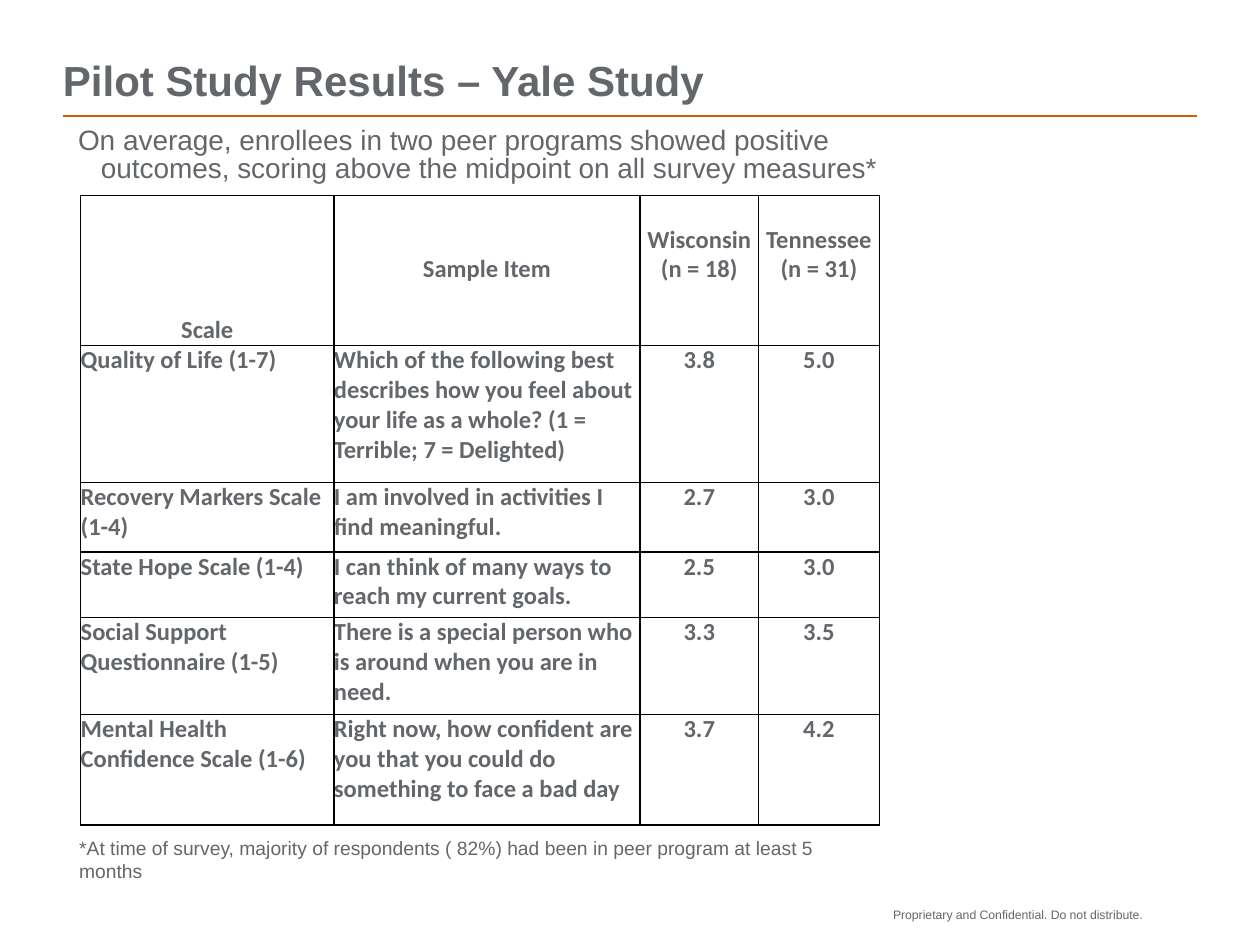
from lxml import etree
from pptx import Presentation, util as u
from pptx.dml.color import RGBColor
from pptx.enum import shapes, text
from pptx.oxml import ns

HUES = {"ink": "63666A", "rule": "D45D00", "grid": "000000"}
WIDE, HIGH = u.Inches(10), u.Inches(7.5)

HEAD = [["Scale", "", "Wisconsin", "Tennessee"],
        ["", "Sample Item", "(n = 18)", "(n = 31)"]]
BODY = [
    ["Quality of Life (1-7)",
     "Which of the following best describes how you feel about your life "
     "as a whole? (1 = Terrible; 7 = Delighted)", "3.8", "5.0"],
    ["Recovery Markers Scale (1-4)",
     "I am involved in activities I find meaningful.", "2.7", "3.0"],
    ["State Hope Scale (1-4)",
     "I can think of many ways to reach my current goals.", "2.5", "3.0"],
    ["Social Support Questionnaire (1-5)",
     "There is a special person who is around when you are in need.",
     "3.3", "3.5"],
    ["Mental Health Confidence Scale (1-6)",
     "Right now, how confident are you that you could do something "
     "to face a bad day", "3.7", "4.2"],
]
# Shares of the slide's width and height, in percent
COLS = [20.1, 24.3, 9.4, 9.6]
ROWS = [6.27, 9.6, 14.53, 7.33, 6.93, 10.27, 11.73]


def across(share):
    return round(WIDE * share / 100)


def down(share):
    return round(HIGH * share / 100)


def place(box):
    """Turn (left, top, width, height) in percent into slide lengths."""
    x, y, w, h = box
    return across(x), down(y), across(w), down(h)


def style(para, size, face="Arial", bold=False):
    font = para.font
    font.size, font.name, font.bold = u.Pt(size), face, bold
    font.color.rgb = RGBColor.from_string(HUES["ink"])


def flush(frame):
    frame.margin_left = frame.margin_right = 0
    frame.margin_top = frame.margin_bottom = 0


def write(slide, box, words, size, bold=False, inset=False, wrap=True):
    frame = slide.shapes.add_textbox(*place(box)).text_frame
    frame.word_wrap = wrap
    if not inset:
        flush(frame)
    para = frame.paragraphs[0]
    para.text = words
    style(para, size, bold=bold)
    return frame, para


def header(slide, box):
    """Title standing on a rule a little below its box."""
    x, y, w, h = box
    frame, para = write(slide, box, "Pilot Study Results – Yale Study", 24, True)
    frame.vertical_anchor = text.MSO_ANCHOR.BOTTOM
    para.line_spacing = 0.9
    level = down(y + h + 1.07)
    rule = slide.shapes.add_connector(
        shapes.MSO_CONNECTOR.STRAIGHT, across(x), level, across(x + w), level)
    rule.line.width = u.Pt(1)
    rule.line.color.rgb = RGBColor.from_string(HUES["rule"])
    etree.SubElement(rule._element.spPr, ns.qn("a:effectLst"))


def lead(slide, box):
    para = write(slide, box, "On average, enrollees in two peer programs showed "
                 "positive outcomes, scoring above the midpoint on all survey "
                 "measures*", 16)[1]
    para.line_spacing = 0.85
    props = para._p.get_or_add_pPr()
    props.set("marL", str(u.Inches(0.18)))
    props.set("indent", str(-u.Inches(0.18)))


def edge(cell, sides):
    """Draw the named sides of a cell; leave its other sides open."""
    props = cell._tc.get_or_add_tcPr()
    for side in "LRTB":
        line = etree.SubElement(props, ns.qn("a:ln" + side), w=str(u.Pt(1)))
        if side in sides:
            fill = etree.SubElement(line, ns.qn("a:solidFill"))
            etree.SubElement(fill, ns.qn("a:srgbClr"), val=HUES["grid"])
        else:
            etree.SubElement(line, ns.qn("a:noFill"))


def scores(slide, left, top):
    data = HEAD + BODY
    box = (left, top, sum(COLS), sum(ROWS))
    table = slide.shapes.add_table(len(ROWS), len(COLS), *place(box)).table
    table.first_row = table.horz_banding = False
    for col, share in zip(table.columns, COLS):
        col.width = across(share)
    for row, share in zip(table.rows, ROWS):
        row.height = down(share)
    table.cell(0, 0).merge(table.cell(1, 0))
    for r, line in enumerate(data):
        for c, words in enumerate(line):
            cell = table.cell(r, c)
            open_side = {0: "B", 1: "T"}.get(r, "") if c else ""
            edge(cell, [side for side in "LRTB" if side != open_side])
            cell.fill.background()
            flush(cell)
            low = r == 0
            cell.vertical_anchor = (
                text.MSO_ANCHOR.BOTTOM if low else text.MSO_ANCHOR.TOP)
            if cell.is_spanned:
                continue
            para = cell.text_frame.paragraphs[0]
            para.text = words
            if r < len(HEAD) or c > 1:
                para.alignment = text.PP_ALIGN.CENTER
            style(para, 14, "Calibri", True)


def note(slide, box):
    write(slide, box, "*At time of survey, majority of respondents ( 82%) had "
          "been in peer program at least 5 months", 11, inset=True)


def footer(slide, box):
    para = write(slide, box, "Proprietary and Confidential. Do not distribute.",
                 7, wrap=False)[1]
    para.alignment = text.PP_ALIGN.RIGHT


def main():
    deck = Presentation()
    deck.slide_width, deck.slide_height = WIDE, HIGH
    slide = deck.slides.add_slide(deck.slide_layouts[6])
    header(slide, (5, 2.27, 90, 8.93))
    lead(slide, (6.2, 13.47, 66.7, 10.27))
    scores(slide, 6.4, 20.67)
    note(slide, (5.3, 87.87, 65.5, 3.87))
    footer(slide, (70.8, 96, 19.9, 1.6))
    deck.save("out.pptx")


if __name__ == "__main__":
    main()
